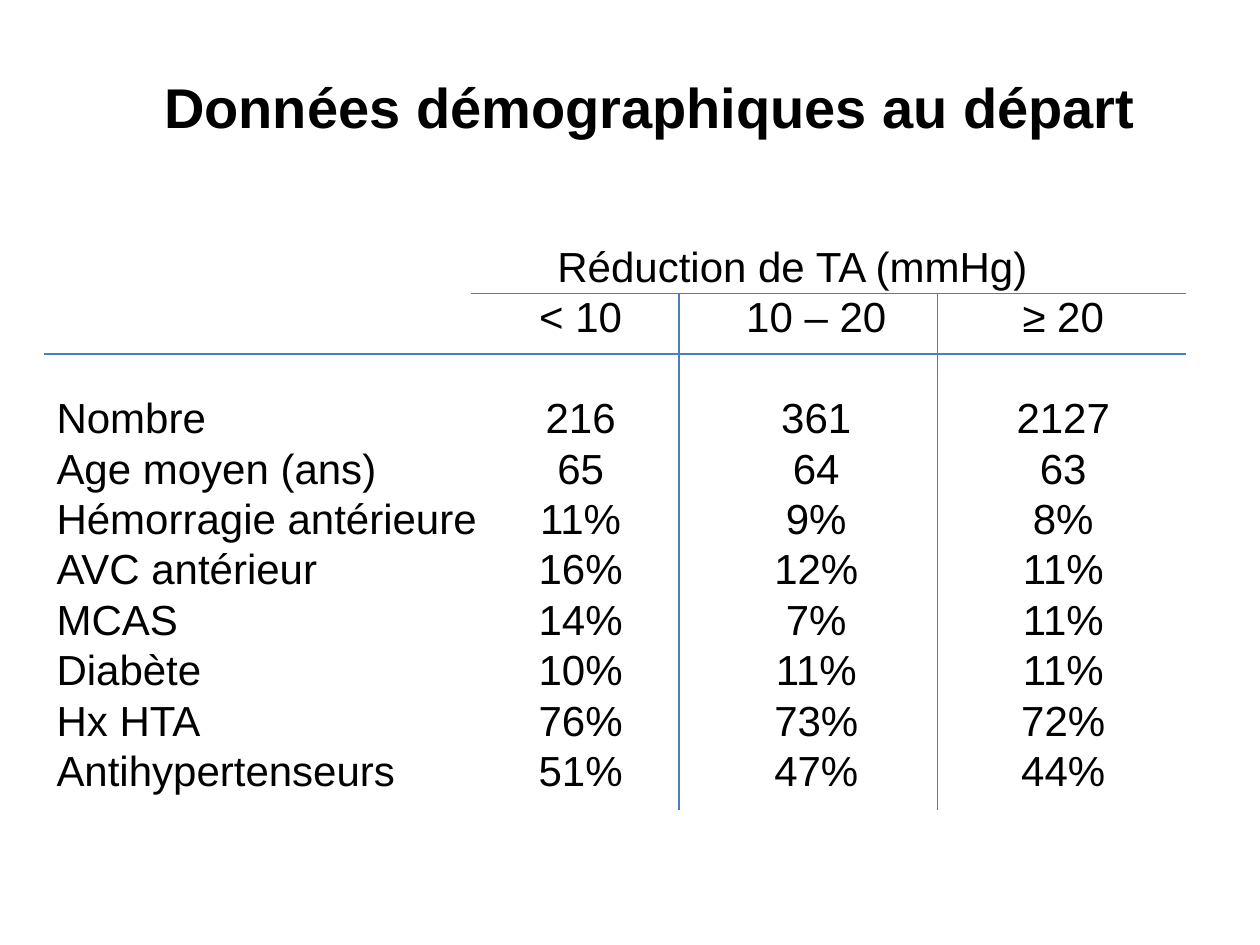
from lxml.etree import SubElement
from pptx import Presentation
from pptx.dml.color import RGBColor
from pptx.enum.shapes import MSO_CONNECTOR
from pptx.enum.text import MSO_ANCHOR, MSO_AUTO_SIZE, PP_ALIGN
from pptx.oxml.ns import qn
from pptx.util import Inches, Pt

INK, BLUE = "000000", "4B7EBC"
PITCH = Pt(28.8)
SPAN = [5.84]
COLS = [4.16, 6.03, 7.99]
HEADS = [
    (SPAN, ["", "Réduction de TA (mmHg)"]),
    (COLS, ["", "< 10", "10 – 20", "≥ 20"]),
]
ROWS = [
    ["Nombre", "216", "361", "2127"],
    ["Age moyen (ans)", "65", "64", "63"],
    ["Hémorragie antérieure", "11%", "9%", "8%"],
    ["AVC antérieur", "16%", "12%", "11%"],
    ["MCAS", "14%", "7%", "11%"],
    ["Diabète", "10%", "11%", "11%"],
    ["Hx HTA", "76%", "73%", "72%"],
    ["Antihypertenseurs", "51%", "47%", "44%"],
]
LINES = [
    (3.74, 2.33, 9.41, 2.33),
    (0.35, 2.81, 9.41, 2.81),
    (5.39, 2.33, 5.39, 6.43),
    (7.44, 2.33, 7.44, 6.43),
]


def color(code):
    """Turn a hex string into a colour."""
    return RGBColor.from_string(code)


def add_run(para, text, size, bold=False):
    """Add one run of formatted text."""
    run = para.add_run()
    run.text = text
    font = run.font
    font.name, font.size, font.bold = "Arial", Pt(size), bold
    font.color.rgb = color(INK)


def add_title(slide, text):
    """Place and fill the title."""
    title = slide.shapes.title
    title.left, title.top = Inches(0.91), Inches(0.52)
    title.width, title.height = Inches(8.5), Inches(0.64)
    frame = title.text_frame
    frame.auto_size = MSO_AUTO_SIZE.NONE
    frame.vertical_anchor = MSO_ANCHOR.MIDDLE
    para = frame.paragraphs[0]
    para.alignment = PP_ALIGN.CENTER
    add_run(para, text, 32, True)


def set_tabs(para, stops):
    """Give a paragraph centred tab stops."""
    tabs = SubElement(para._p.get_or_add_pPr(), qn("a:tabLst"))
    for stop in stops:
        SubElement(tabs, qn("a:tab"), pos=str(Inches(stop)), algn="ctr")


def add_grid(slide):
    """Add the tabbed rows of figures."""
    box = slide.shapes.add_textbox(
        Inches(0.35), Inches(1.86), Inches(9.45), Inches(4.95))
    frame = box.text_frame
    frame.word_wrap = True
    rows = HEADS + [(COLS, row) for row in ROWS]
    for num, (stops, cells) in enumerate(rows):
        para = frame.add_paragraph() if num else frame.paragraphs[0]
        set_tabs(para, stops)
        para.line_spacing = PITCH
        if num == len(HEADS):
            para.space_before = PITCH
        add_run(para, "\t".join(cells), 24)


def add_line(slide, ends):
    """Draw a thin rule between two points."""
    line = slide.shapes.add_connector(
        MSO_CONNECTOR.STRAIGHT, *[Inches(end) for end in ends])
    line.line.color.rgb = color(BLUE)
    line.line.width = Pt(0.75)
    SubElement(line._element.spPr, qn("a:effectLst"))


def main():
    """Build and save the slide."""
    deck = Presentation()
    deck.slide_width, deck.slide_height = Inches(10), Inches(7.5)
    slide = deck.slides.add_slide(deck.slide_layouts[5])
    add_title(slide, "Données démographiques au départ")
    add_grid(slide)
    for ends in LINES:
        add_line(slide, ends)
    deck.save("out.pptx")


if __name__ == "__main__":
    main()
